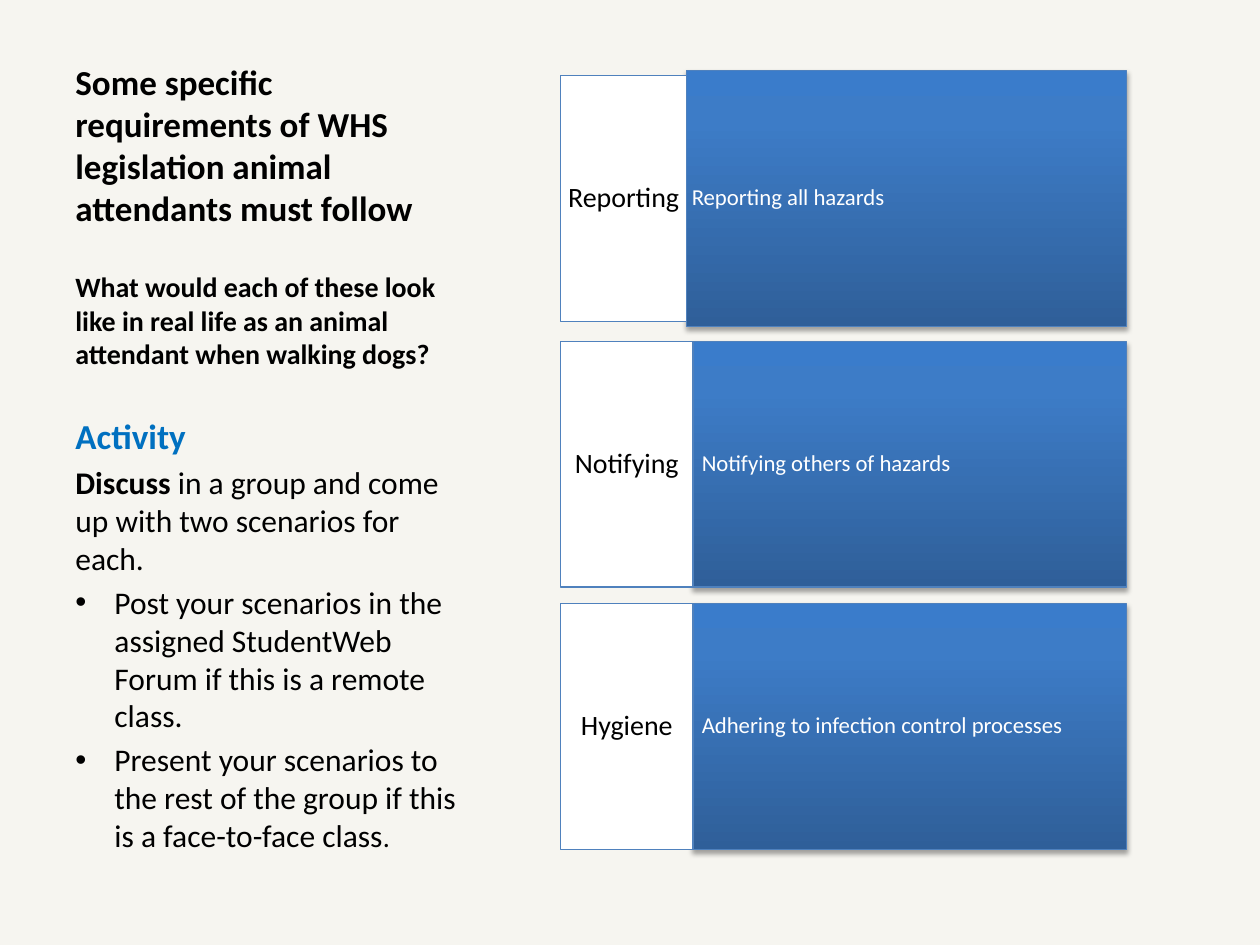
from lxml import etree
from pptx import Presentation
from pptx.dml.color import RGBColor
from pptx.enum.shapes import MSO_SHAPE
from pptx.enum.text import MSO_ANCHOR as ANCHOR, PP_ALIGN as ALIGN
from pptx.oxml import parse_xml
from pptx.oxml.ns import nsdecls, qn
from pptx.util import Inches, Pt

FONT = "Calibri"
BLACK, WHITE, ACCENT, EDGE = "000000", "FFFFFF", "0070C0", "4F81BD"
BACKDROP = "F6F5F0"
GRADIENT = [(0, "2F5F99"), (80, "3D7CC7"), (100, "3A7CCB")]

TITLE = "Some specific requirements of WHS legislation animal attendants must follow"
# Each paragraph: its runs as (text, format), then its own layout
BODY = [
    ([("What would each of these look like in real life as an animal attendant "
       "when walking dogs?", dict(size=16, bold=True))], {}),
    ([("Activity", dict(size=20, bold=True, color=ACCENT))], dict(before=25.5)),
    ([("Discuss", dict(bold=True)),
      (" in a group and come up with two scenarios for each.", {})], dict(before=3.6)),
    ([("Post your scenarios in the assigned StudentWeb Forum if this is a remote class.", {})],
     dict(before=3.6, bullet=True)),
    ([("Present your scenarios to the rest of the group if this is a face-to-face class", {}),
      (".", dict(size=16))], dict(before=3.6, bullet=True)),
]
# Label, detail, top and height of the detail, split between the two, side insets
REQUIREMENTS = [
    ("Reporting", "Reporting all hazards", 0.56, 2.03, 5.45, 0.03, 0.04),
    ("Notifying", "Notifying others of hazards", 2.71, 1.95, 5.5, 0.05, 0.07),
    ("Hygiene", "Adhering to infection control processes", 4.79, 1.95, 5.5, 0.05, 0.07),
]
LEFT, RIGHT, LABEL_HEIGHT = 4.45, 8.94, 1.95


def rgb(color):
    return RGBColor.from_string(color)


def add_run(paragraph, text, size=18, bold=False, color=BLACK):
    run = paragraph.add_run()
    run.text = text
    font = run.font
    font.name, font.size, font.bold = FONT, Pt(size), bold
    font.color.rgb = rgb(color)


def set_frame(frame, anchor, side=0.1, end=0.05):
    frame.word_wrap = True
    frame.vertical_anchor = anchor
    frame.margin_left = frame.margin_right = Inches(side)
    frame.margin_top = frame.margin_bottom = Inches(end)


def add_bullet(paragraph):
    props = paragraph._p.get_or_add_pPr()
    props.set("marL", str(Inches(0.31)))
    props.set("indent", str(-Inches(0.31)))
    etree.SubElement(props, qn("a:buFont")).set("typeface", "Arial")
    etree.SubElement(props, qn("a:buChar")).set("char", "•")


def add_text(slide, paragraphs, box, anchor=ANCHOR.TOP):
    frame = slide.shapes.add_textbox(*map(Inches, box)).text_frame
    set_frame(frame, anchor)
    for i, (runs, layout) in enumerate(paragraphs):
        paragraph = frame.add_paragraph() if i else frame.paragraphs[0]
        if "before" in layout:
            paragraph.space_before = Pt(layout["before"])
        if layout.get("bullet"):
            add_bullet(paragraph)
        for text, style in runs:
            add_run(paragraph, text, **style)


def add_panel(slide, text, box, side, end, align, **style):
    panel = slide.shapes.add_shape(MSO_SHAPE.RECTANGLE, *map(Inches, box))
    panel.shadow.inherit = False
    panel.fill.solid()
    panel.fill.fore_color.rgb = rgb(WHITE)
    panel.line.color.rgb = rgb(EDGE)
    panel.line.width = Pt(0.75)
    set_frame(panel.text_frame, ANCHOR.MIDDLE, side, end)
    paragraph = panel.text_frame.paragraphs[0]
    paragraph.alignment = align
    paragraph.line_spacing = 0.9
    add_run(paragraph, text, **style)
    return panel


def shade(panel):
    """Give the panel its gradient, dark at the bottom, and its soft shadow."""
    props = panel._element.spPr
    stops = "".join(f'<a:gs pos="{pos * 1000}"><a:srgbClr val="{color}"/></a:gs>'
                    for pos, color in GRADIENT)
    props.replace(props.find(qn("a:solidFill")), parse_xml(
        f'<a:gradFill {nsdecls("a")} rotWithShape="1"><a:gsLst>{stops}</a:gsLst>'
        '<a:lin ang="16200000" scaled="0"/></a:gradFill>'))
    props.find(qn("a:effectLst")).append(parse_xml(
        f'<a:outerShdw {nsdecls("a")} blurRad="{Pt(3.1)}" dist="{Pt(1.8)}" dir="5400000" '
        'rotWithShape="0"><a:srgbClr val="000000"><a:alpha val="35000"/></a:srgbClr>'
        '</a:outerShdw>'))


def main():
    deck = Presentation()
    deck.slide_width, deck.slide_height = Inches(10), Inches(7.5)
    slide = deck.slides.add_slide(deck.slide_layouts[6])
    slide.background.fill.solid()
    slide.background.fill.fore_color.rgb = rgb(BACKDROP)

    add_text(slide, [([(TITLE, dict(size=20, bold=True))], {})],
             (0.5, 0.3, 3.29, 1.56), ANCHOR.BOTTOM)
    add_text(slide, BODY, (0.5, 2.09, 3.29, 4.61))

    for label, detail, top, height, split, label_side, detail_side in REQUIREMENTS:
        shade(add_panel(slide, detail, (split, top, RIGHT - split, height),
                        detail_side, 0.5, ALIGN.LEFT, size=13, color=WHITE))
        label_top = top + (height - LABEL_HEIGHT) / 2
        add_panel(slide, label, (LEFT, label_top, split - LEFT, LABEL_HEIGHT),
                  label_side, 0.19, ALIGN.CENTER, size=16)

    deck.save("out.pptx")


if __name__ == "__main__":
    main()
